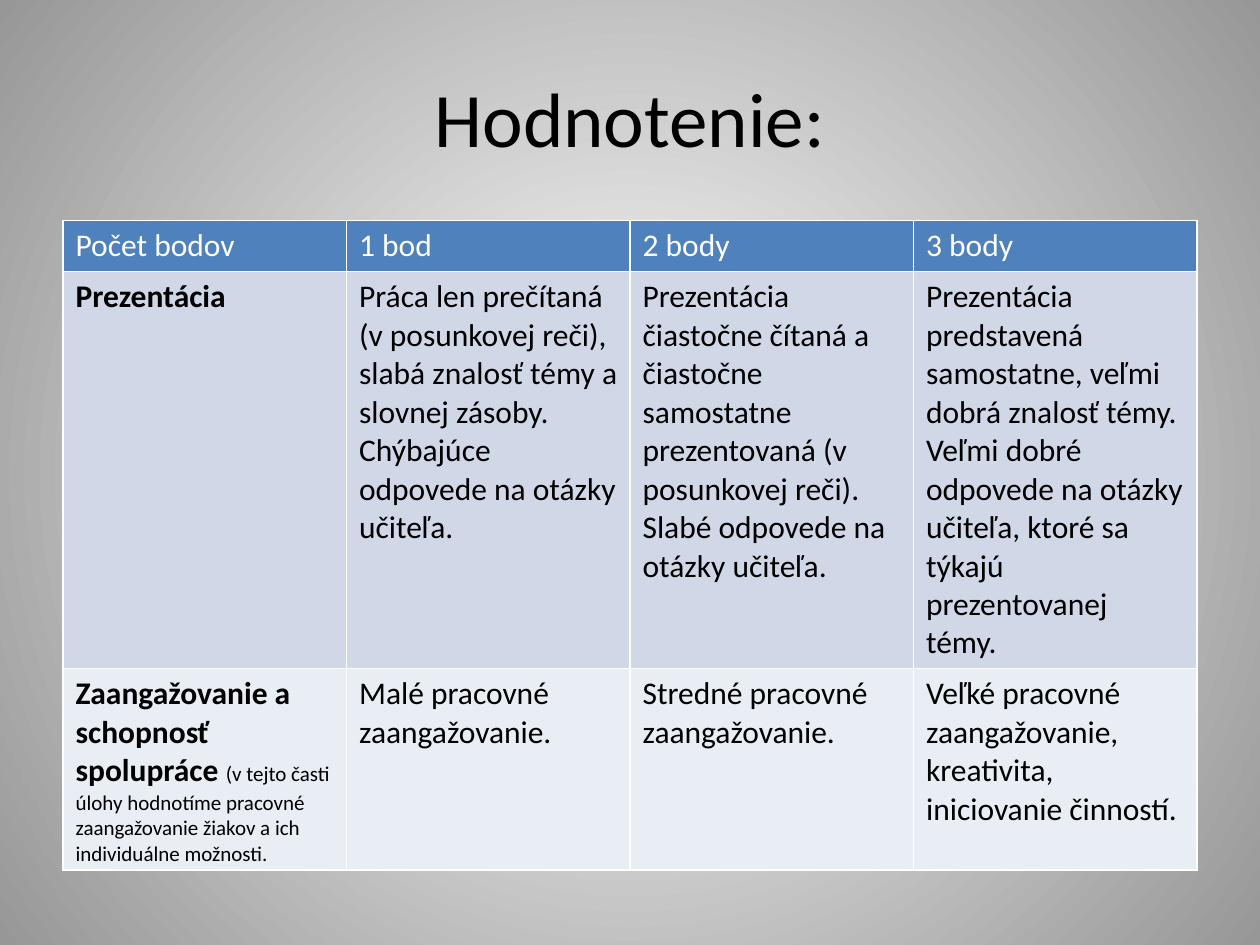
import pptx
import pptx.dml.color
import pptx.enum.text
import pptx.oxml
import pptx.oxml.ns
import pptx.util

Pt = pptx.util.Pt
RGB = pptx.dml.color.RGBColor
NS = pptx.oxml.ns.nsdecls("a")

BLACK = RGB(0x00, 0x00, 0x00)
WHITE = RGB(0xFF, 0xFF, 0xFF)
GRAY = RGB(0x97, 0x97, 0x97)
BLUE = RGB(0x4F, 0x81, 0xBD)
BAND = RGB(0xD0, 0xD8, 0xE8)
PALE = RGB(0xE9, 0xED, 0xF4)

FONT = "Calibri"
COL_WIDTH = 162
# Row height, fill, text colour
ROWS = [(29.2, BLUE, WHITE), (226.8, BAND, BLACK), (111.9, PALE, BLACK)]

# Each cell is a list of runs: text, size, bold
CELLS = [
    [[(text, 18, False)] for text in
     ("Počet bodov", "1 bod", "2 body", "3 body")],
    [
        [("Prezentácia", 18, True)],
        [("Práca len prečítaná (v posunkovej reči), slabá znalosť témy "
          "a slovnej zásoby. Chýbajúce odpovede na otázky učiteľa.",
          18, False)],
        [("Prezentácia čiastočne čítaná a čiastočne samostatne "
          "prezentovaná (v posunkovej reči). Slabé odpovede na otázky "
          "učiteľa.", 18, False)],
        [("Prezentácia predstavená samostatne, veľmi dobrá znalosť témy. "
          "Veľmi dobré odpovede na otázky učiteľa, ktoré sa týkajú "
          "prezentovanej témy.", 18, False)],
    ],
    [
        [("Zaangažovanie a schopnosť spolupráce ", 18, True),
         ("(v tejto časti úlohy hodnotíme pracovné zaangažovanie žiakov "
          "a ich individuálne možnosti.", 12, False)],
        [("Malé pracovné zaangažovanie.", 18, False)],
        [("Stredné pracovné zaangažovanie.", 18, False)],
        [("Veľké pracovné zaangažovanie, kreativita, iniciovanie "
          "činností.", 18, False)],
    ],
]


def add_run(para, text, size, bold, color):
    run = para.add_run()
    run.text = text
    run.font.name = FONT
    run.font.size = Pt(size)
    run.font.bold = bold
    run.font.color.rgb = color


def set_back(slide):
    fill = slide.background.fill
    fill.gradient()
    for stop, color in zip(fill.gradient_stops, (WHITE, GRAY)):
        stop.color.rgb = color
    # Turn the linear gradient into a circle around the centre
    line = slide.element.find(".//" + pptx.oxml.ns.qn("a:lin"))
    line.getparent().replace(line, pptx.oxml.parse_xml(
        f'<a:path {NS} path="circle">'
        '<a:fillToRect l="50000" t="50000" r="50000" b="50000"/></a:path>'))


def add_title(slide, text):
    box = slide.shapes.add_textbox(Pt(36), Pt(21.6), Pt(648), Pt(90))
    frame = box.text_frame
    frame.word_wrap = True
    frame.vertical_anchor = pptx.enum.text.MSO_ANCHOR.MIDDLE
    para = frame.paragraphs[0]
    para.alignment = pptx.enum.text.PP_ALIGN.CENTER
    add_run(para, text, 44, False, BLACK)


def set_edges(cell):
    props = cell._tc.get_or_add_tcPr()
    for side in "LRTB":
        props.append(pptx.oxml.parse_xml(
            f'<a:ln{side} {NS} w="{Pt(1)}"><a:solidFill>'
            f'<a:srgbClr val="{WHITE}"/></a:solidFill></a:ln{side}>'))


def fill_cell(cell, runs, back, color):
    set_edges(cell)
    cell.fill.solid()
    cell.fill.fore_color.rgb = back
    for text, size, bold in runs:
        add_run(cell.text_frame.paragraphs[0], text, size, bold, color)


def add_grid(slide):
    cols = len(CELLS[0])
    total = sum(row[0] for row in ROWS)
    table = slide.shapes.add_table(
        len(ROWS), cols, Pt(36), Pt(126),
        Pt(cols * COL_WIDTH), Pt(total)).table
    for col in table.columns:
        col.width = Pt(COL_WIDTH)
    for row, (height, back, color), texts in zip(table.rows, ROWS, CELLS):
        row.height = Pt(height)
        for cell, runs in zip(row.cells, texts):
            fill_cell(cell, runs, back, color)


def main():
    deck = pptx.Presentation()
    deck.slide_width, deck.slide_height = Pt(720), Pt(540)
    slide = deck.slides.add_slide(deck.slide_layouts[6])
    set_back(slide)
    add_title(slide, "Hodnotenie:")
    add_grid(slide)
    deck.save("out.pptx")


if __name__ == "__main__":
    main()
